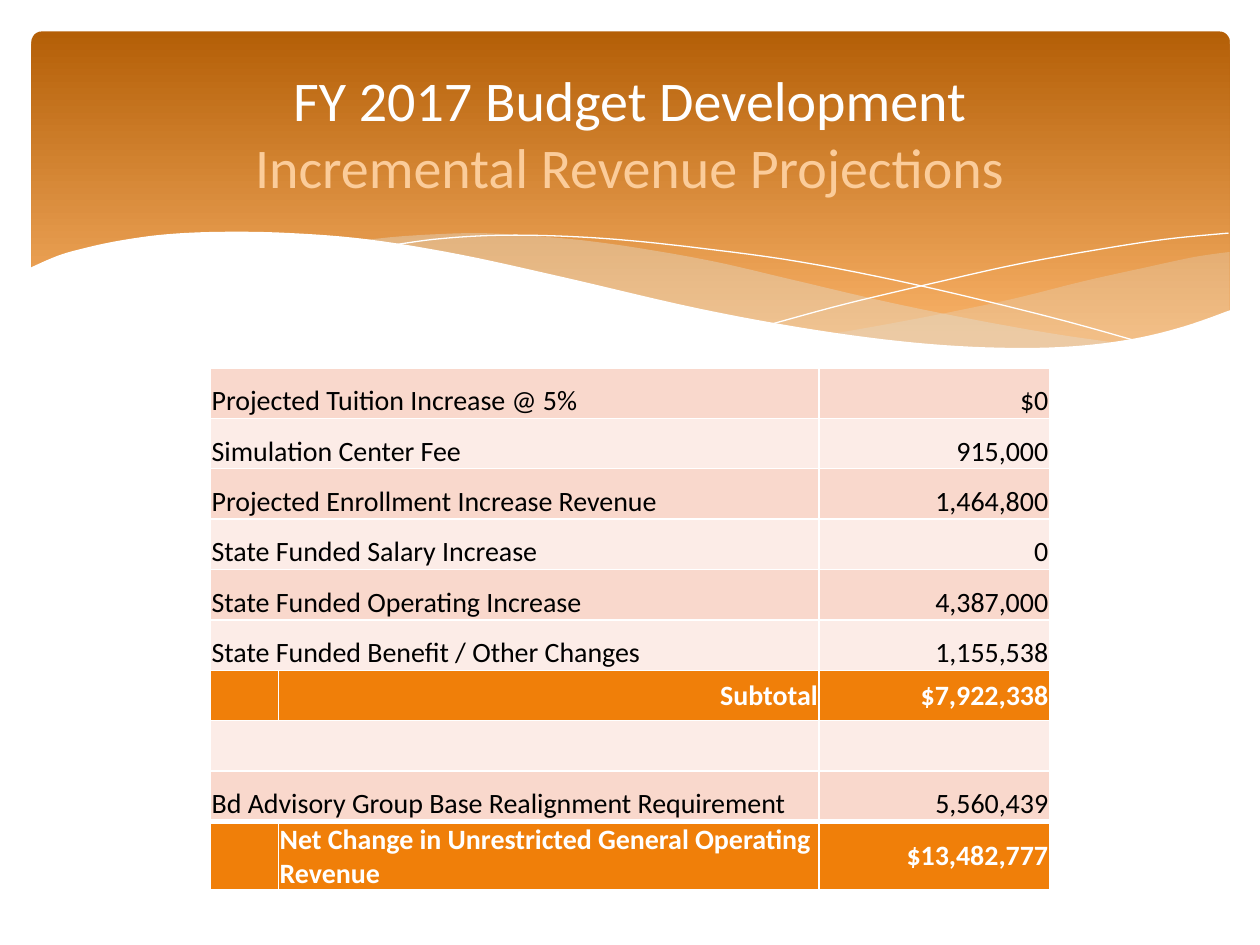
from dataclasses import dataclass
from lxml import etree
from pptx import Presentation
from pptx.dml.color import RGBColor
from pptx.enum.shapes import MSO_SHAPE
from pptx.enum.text import MSO_ANCHOR, PP_ALIGN
from pptx.oxml.ns import qn
from pptx.util import Pt

PX = 9144  # EMU per px, 100 px to the inch
FONT = "Calibri"
ROUND = MSO_SHAPE.ROUNDED_RECTANGLE
LEFT, MID, RIGHT = PP_ALIGN.LEFT, PP_ALIGN.CENTER, PP_ALIGN.RIGHT
BASE, CENTER = MSO_ANCHOR.BOTTOM, MSO_ANCHOR.MIDDLE

WHITE = RGBColor(0xFF, 0xFF, 0xFF)
BLACK = RGBColor(0, 0, 0)
BROWN = RGBColor(0xB4, 0x5F, 0x07)
AMBER = RGBColor(0xF9, 0xB2, 0x68)
PEACH = RGBColor(0xFB, 0xCC, 0x9A)
SAND = RGBColor(0xE3, 0xDE, 0xD1)
ORANGE = RGBColor(0xF0, 0x7F, 0x09)
BANDS = RGBColor(0xF9, 0xD8, 0xCC), RGBColor(0xFC, 0xEC, 0xE7)

Points = list[tuple[float, float]]


@dataclass
class Wave:
    """Curved edges joined in turn; without a fill it is an open white line."""
    edges: list[Points]
    fill: RGBColor | None = None
    alpha: int = 100


@dataclass
class Row:
    label: str
    value: str
    total: bool = False
    align: PP_ALIGN = LEFT
    top: int = 1


WAVES = [
    Wave([[(976, 200), (948, 204), (906, 213), (861, 223), (805, 237), (753, 248),
           (706, 257), (661, 265)],
          [(661, 265), (705, 271), (757, 276), (803, 278), (844, 277), (881, 273),
           (913, 267), (942, 259), (976, 247)]], SAND, 29),
    Wave([[(893, 273), (837, 265), (775, 254), (706, 240), (629, 222), (569, 208),
           (514, 198), (465, 191), (420, 187), (380, 185), (344, 186), (313, 188),
           (286, 191)],
          [(286, 191), (342, 199), (404, 211), (449, 222), (530, 240), (601, 255),
           (665, 266), (722, 274), (773, 277), (818, 278), (857, 277),
           (893, 273)]], SAND, 40),
    Wave([[(309, 195), (344, 190), (387, 187), (433, 187), (489, 190), (556, 197),
           (636, 208), (727, 226), (831, 251), (907, 272)]]),
    Wave([[(613, 257), (672, 241), (748, 223), (806, 210), (866, 199), (924, 190),
           (975, 185)]]),
    Wave([[(977, 246), (940, 259), (899, 269), (850, 275), (793, 276), (726, 272),
           (648, 262), (555, 245), (447, 220), (365, 202), (292, 190), (230, 185),
           (177, 184), (132, 186), (95, 191), (67, 197), (46, 203), (23, 213)],
          [(23, 213), (23, 329)], [(23, 329), (977, 329)]], WHITE),
]

COLS = [54, 429, 183]
HIGH = 40
ROWS = [
    Row("Projected Tuition Increase @ 5%", "$0"),
    Row("Simulation Center Fee", "915,000"),
    Row("Projected Enrollment Increase Revenue", "1,464,800"),
    Row("State Funded Salary Increase", "0"),
    Row("State Funded Operating Increase", "4,387,000"),
    Row("State Funded Benefit / Other Changes", "1,155,538"),
    Row("Subtotal", "$7,922,338", True, RIGHT),
    Row("", ""),
    Row("Bd Advisory Group Base Realignment Requirement", "5,560,439"),
    Row("Net Change in Unrestricted General Operating Revenue", "$13,482,777",
        True, top=3),
]


def smooth(pts: Points, steps: int = 6) -> Points:
    """Catmull-Rom curve through the points."""
    if len(pts) < 3:
        return pts
    ends = [pts[0], *pts, pts[-1]]
    out = [pts[0]]
    for a, b, c, d in zip(ends, ends[1:], ends[2:], ends[3:]):
        for i in range(1, steps + 1):
            t = i / steps
            out.append(tuple(
                (2 * q + (r - p) * t + (2 * p - 5 * q + 4 * r - s) * t ** 2
                 + (3 * q - p - 3 * r + s) * t ** 3) / 2
                for p, q, r, s in zip(a, b, c, d)))
    return out


def draw_wave(shapes, wave: Wave) -> None:
    pts = [(round(x * PX), round(y * PX))
           for edge in wave.edges for x, y in smooth(edge)]
    form = shapes.build_freeform(*pts[0], scale=1.0)
    form.add_line_segments(pts[1:], close=wave.fill is not None)
    shape = form.convert_to_shape()
    shape.shadow.inherit = False
    if wave.fill is None:
        shape.fill.background()
        shape.line.color.rgb = WHITE
        shape.line.width = Pt(0)
        return
    shape.line.fill.background()
    shape.fill.solid()
    shape.fill.fore_color.rgb = wave.fill
    if wave.alpha < 100:
        tint = shape.fill._xPr.find(".//" + qn("a:srgbClr"))
        etree.SubElement(tint, qn("a:alpha"), val=str(wave.alpha * 1000))


def draw_band(shapes) -> None:
    band = shapes.add_shape(ROUND, 25 * PX, 25 * PX, 951 * PX, 270 * PX)
    band.adjustments[0] = 0.03
    band.shadow.inherit = False
    band.line.fill.background()
    band.fill.gradient()
    band.fill.gradient_angle = 270
    for stop, color, pos in zip(band.fill.gradient_stops, (BROWN, AMBER), (0, 0.9)):
        stop.color.rgb = color
        stop.position = pos


def add_run(para, text: str, size: int, color: RGBColor, bold: bool = False) -> None:
    run = para.add_run()
    run.text = text
    font = run.font
    font.name, font.size, font.bold = FONT, Pt(size), bold
    font.color.rgb = color


def draw_title(shapes) -> None:
    frame = shapes.add_textbox(50 * PX, 37 * PX, 900 * PX, 137 * PX).text_frame
    frame.word_wrap = True
    frame.vertical_anchor = CENTER
    para = frame.paragraphs[0]
    para.alignment = MID
    add_run(para, "FY 2017 Budget Development", 32, WHITE)
    para.add_line_break()
    add_run(para, "Incremental Revenue Projections", 32, PEACH)


def add_edge(cell, side: str, width: int) -> None:
    line = etree.SubElement(cell._tc.get_or_add_tcPr(), qn("a:ln" + side),
                            w=str(Pt(width)))
    fill = etree.SubElement(line, qn("a:solidFill"))
    etree.SubElement(fill, qn("a:srgbClr"), val=str(WHITE))


def style_cell(cell, row: Row, fill: RGBColor) -> None:
    cell.margin_left = cell.margin_top = cell.margin_right = PX
    cell.margin_bottom = 0
    cell.vertical_anchor = CENTER if row.total else BASE
    for side in "LRTB":
        add_edge(cell, side, row.top if side == "T" else 1)
    cell.fill.solid()
    cell.fill.fore_color.rgb = fill


def draw_table(shapes) -> None:
    table = shapes.add_table(len(ROWS), len(COLS), 167 * PX, 292 * PX,
                             sum(COLS) * PX, len(ROWS) * HIGH * PX).table
    table.first_row = table.horz_banding = False
    for col, wide in zip(table.columns, COLS):
        col.width = wide * PX
    for i, row in enumerate(ROWS):
        table.rows[i].height = HIGH * PX
        cells = [table.cell(i, j) for j in range(len(COLS))]
        for cell in cells:
            style_cell(cell, row, ORANGE if row.total else BANDS[i % 2])
        if not row.total:
            cells[0].merge(cells[1])
        name = cells[1] if row.total else cells[0]
        for cell, text, align in ((name, row.label, row.align),
                                  (cells[2], row.value, RIGHT)):
            if text:
                para = cell.text_frame.paragraphs[0]
                para.alignment = align
                add_run(para, text, 16, WHITE if row.total else BLACK, row.total)


def main() -> None:
    deck = Presentation()
    deck.slide_width, deck.slide_height = 1000 * PX, 750 * PX
    shapes = deck.slides.add_slide(deck.slide_layouts[6]).shapes
    # Banner
    draw_band(shapes)
    for wave in WAVES:
        draw_wave(shapes, wave)
    # Content
    draw_title(shapes)
    draw_table(shapes)
    deck.save("out.pptx")


if __name__ == "__main__":
    main()
